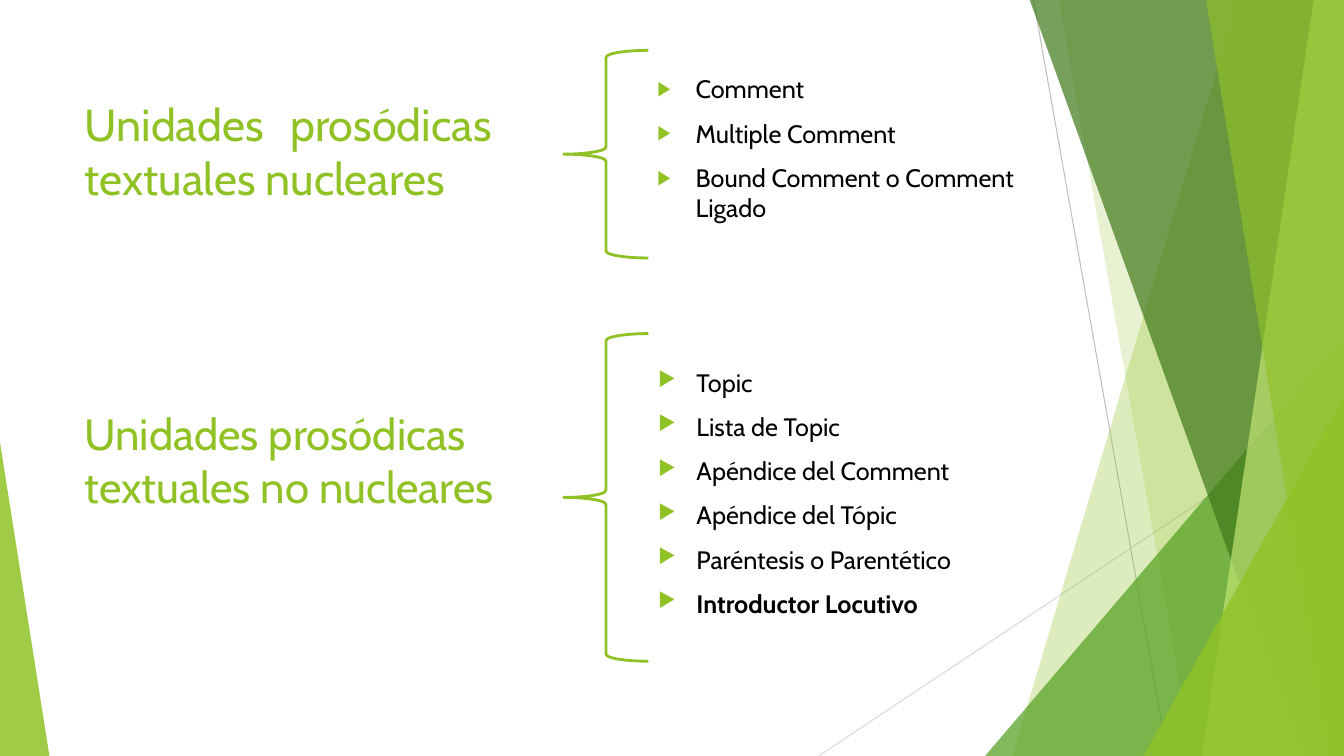
"""Build a slide that groups prosodic units with braces."""
from dataclasses import dataclass

from lxml import etree
from pptx import Presentation
from pptx.dml.color import RGBColor
from pptx.enum.shapes import MSO_CONNECTOR, MSO_SHAPE
from pptx.enum.text import MSO_ANCHOR, MSO_AUTO_SIZE, PP_ALIGN
from pptx.oxml.ns import qn
from pptx.shapes.base import BaseShape
from pptx.slide import Slide
from pptx.text.text import TextFrame, _Paragraph
from pptx.util import Inches, Pt

STRAIGHT = MSO_CONNECTOR.STRAIGHT
BRACE = MSO_SHAPE.LEFT_BRACE
WEDGE = MSO_SHAPE.ISOSCELES_TRIANGLE
TOP = MSO_ANCHOR.TOP
NO_FIT = MSO_AUTO_SIZE.NONE
LEFT = PP_ALIGN.LEFT
JUSTIFY = PP_ALIGN.JUSTIFY

FONT = "Cabin"
WIDE, HIGH, RISE = 13.33, 7.5, -0.01
COLORS = {
    "lime": "90C226",
    "green": "54A021",
    "dark": "3F7819",
    "pale": "C0E474",
    "gray": "BFBFBF",
    "light": "D9D9D9",
    "black": "000000",
}
Box = tuple[float, float, float, float]


@dataclass(frozen=True)
class Ray:
    """A thin line behind the panels."""
    ends: Box
    color: str


@dataclass(frozen=True)
class Panel:
    """A four-sided band that reaches the right edge."""
    top: float
    base: float
    color: str
    alpha: int


@dataclass(frozen=True)
class Wedge:
    """A right triangle that stands on the bottom edge."""
    left: float
    top: float
    width: float
    peak: int
    color: str
    alpha: int


@dataclass(frozen=True)
class Group:
    """A heading, its brace and its list of units."""
    title: str
    size: float
    align: PP_ALIGN
    head: Box
    brace: Box
    body: Box
    items: tuple[str, ...]
    strong: str = ""


RAYS = (
    Ray((10.25, 0, 11.58, HIGH), "gray"),
    Ray((WIDE, 4.03, 8.12, HIGH), "light"),
)
DECOR = (
    Panel(12.28, 10.04, "lime", 30),
    Panel(10.5, 11.83, "lime", 20),
    Wedge(9.77, 3.33, 3.56, 1, "green", 72),
    Panel(10.21, 12.91, "dark", 70),
    Panel(13.03, 11.92, "pale", 70),
    Panel(11.96, 13.18, "lime", 65),
    Wedge(11.34, 3.93, 1.99, 1, "lime", 80),
    Wedge(0, 4.39, 0.49, 0, "lime", 85),
)
GROUPS = (
    Group("Unidades prosódicas textuales nucleares", 32, JUSTIFY,
          (0.74, 0.91, 4.24, 1.42), (5.59, 0.5, 0.84, 2.06),
          (6.42, 0.68, 3.86, 1.89),
          ("Comment", "Multiple Comment", "Bound Comment o Comment Ligado")),
    Group("Unidades prosódicas textuales no nucleares", 31.2, LEFT,
          (0.74, 3.99, 4.94, 1.42), (5.59, 3.31, 0.84, 3.25),
          (6.43, 3.59, 3.86, 3.23),
          ("Topic", "Lista de Topic", "Apéndice del Comment",
           "Apéndice del Tópic", "Paréntesis o Parentético",
           "Introductor Locutivo"), "Introductor Locutivo"),
)


def shade(name: str) -> RGBColor:
    """Return a named color."""
    return RGBColor.from_string(COLORS[name])


def draw_ray(slide: Slide, ray: Ray) -> None:
    """Draw one thin line without a shadow."""
    line = slide.shapes.add_connector(STRAIGHT, *map(Inches, ray.ends))
    line.line.color.rgb = shade(ray.color)
    line.line.width = Pt(0.75)
    etree.SubElement(line.element.spPr, qn("a:effectLst"))


def draw_decor(slide: Slide, part: Panel | Wedge) -> None:
    """Draw one see-through panel or wedge."""
    if isinstance(part, Panel):
        spots = ((part.top, RISE), (WIDE, RISE), (WIDE, HIGH), (part.base, HIGH))
        first, *rest = [(Inches(x), Inches(y)) for x, y in spots]
        form = slide.shapes.build_freeform(*first)
        form.add_line_segments(rest, close=True)
        shape = form.convert_to_shape()
    else:
        box = (part.left, part.top, part.width, HIGH - part.top)
        shape = slide.shapes.add_shape(WEDGE, *map(Inches, box))
        shape.adjustments[0] = part.peak
    shape.shadow.inherit = False
    shape.line.fill.background()
    shape.fill.solid()
    shape.fill.fore_color.rgb = shade(part.color)
    color = shape.element.spPr.find(f"{qn('a:solidFill')}/{qn('a:srgbClr')}")
    etree.SubElement(color, qn("a:alpha"), val=str(part.alpha * 1000))


def draw_brace(slide: Slide, box: Box) -> None:
    """Draw one open left brace."""
    brace = slide.shapes.add_shape(BRACE, *map(Inches, box))
    brace.shadow.inherit = False
    brace.fill.background()
    brace.line.color.rgb = shade("lime")
    brace.line.width = Pt(2)


def place(slide: Slide, shape: BaseShape | None, box: Box) -> TextFrame:
    """Move a holder to the front, or add a text box, and set its frame."""
    if shape is None:
        shape = slide.shapes.add_textbox(*map(Inches, box))
    else:
        slide.shapes.element.append(shape.element)
        shape.left, shape.top, shape.width, shape.height = map(Inches, box)
    frame = shape.text_frame
    frame.word_wrap = True
    frame.auto_size = NO_FIT
    frame.vertical_anchor = TOP
    return frame


def add_run(para: _Paragraph, text: str, size: float, color: str,
            bold: bool = False) -> None:
    """Add one styled run."""
    run = para.add_run()
    run.text = text
    run.font.name = FONT
    run.font.size = Pt(size)
    run.font.bold = bold
    run.font.color.rgb = shade(color)


def add_mark(para: _Paragraph) -> None:
    """Give a list item its spacing, indent and bullet."""
    para.alignment = LEFT
    para.space_before = Pt(10)
    props = para._p.get_or_add_pPr()
    props.set("marL", str(Inches(0.38)))
    props.set("indent", str(Inches(-0.38)))
    color = etree.SubElement(props, qn("a:buClr"))
    etree.SubElement(color, qn("a:srgbClr"), val=COLORS["lime"])
    etree.SubElement(props, qn("a:buSzPct"), val="80000")
    etree.SubElement(props, qn("a:buChar"), char="▶")


def draw_group(slide: Slide, group: Group, title: BaseShape | None,
               body: BaseShape | None) -> None:
    """Draw a heading, its brace and its list."""
    para = place(slide, title, group.head).paragraphs[0]
    para.alignment = group.align
    add_run(para, group.title, group.size, "lime")
    draw_brace(slide, group.brace)
    frame = place(slide, body, group.body)
    for i, item in enumerate(group.items):
        para = frame.add_paragraph() if i else frame.paragraphs[0]
        add_mark(para)
        add_run(para, item, 18, "black", item == group.strong)


def main() -> None:
    """Build and save the deck."""
    deck = Presentation()
    deck.slide_width, deck.slide_height = Inches(WIDE), Inches(HIGH)
    slide = deck.slides.add_slide(deck.slide_layouts[1])
    for ray in RAYS:
        draw_ray(slide, ray)
    for part in DECOR:
        draw_decor(slide, part)
    holders = ((slide.shapes.title, slide.placeholders[1]), (None, None))
    for group, (title, body) in zip(GROUPS, holders):
        draw_group(slide, group, title, body)
    deck.save("out.pptx")


if __name__ == "__main__":
    main()
